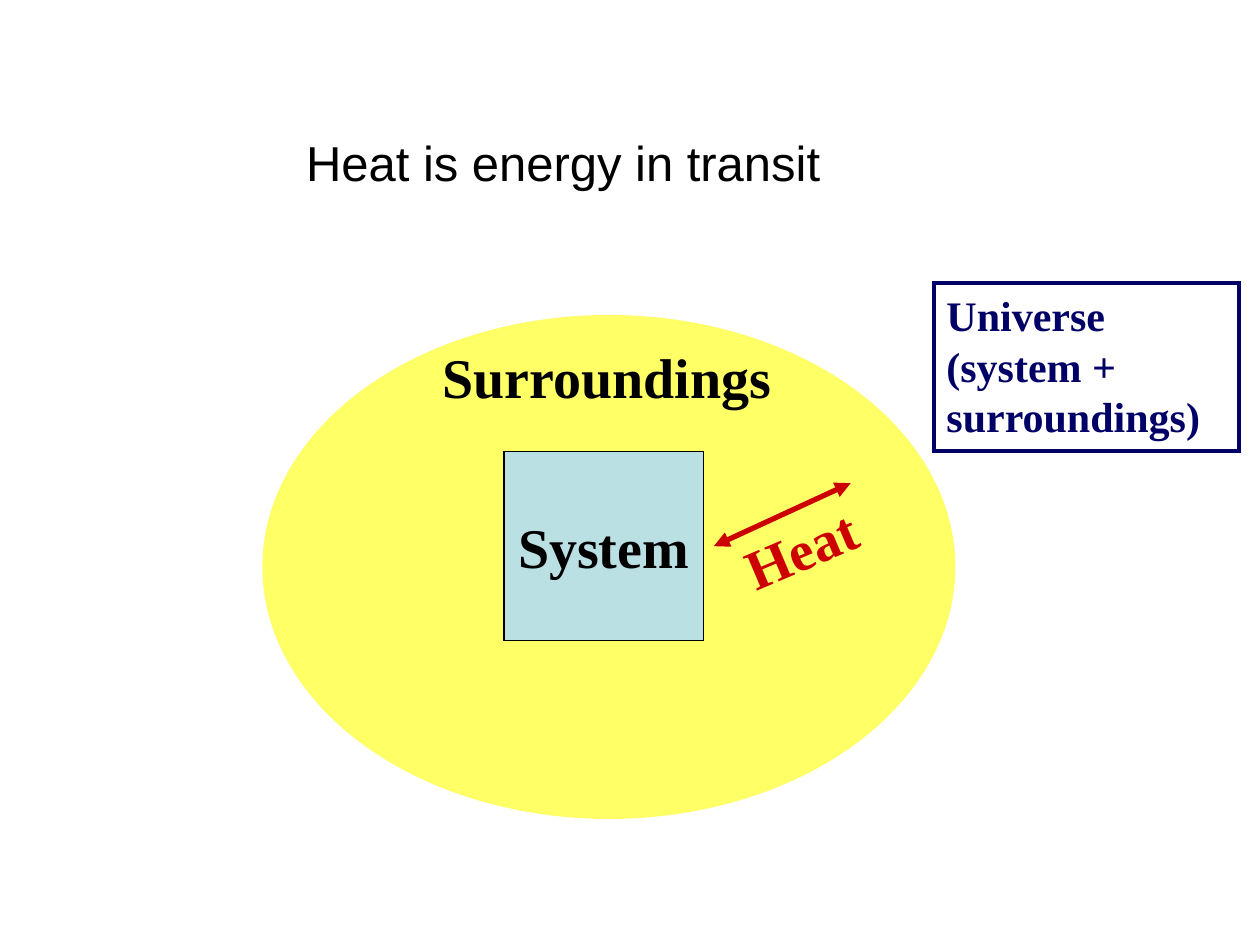
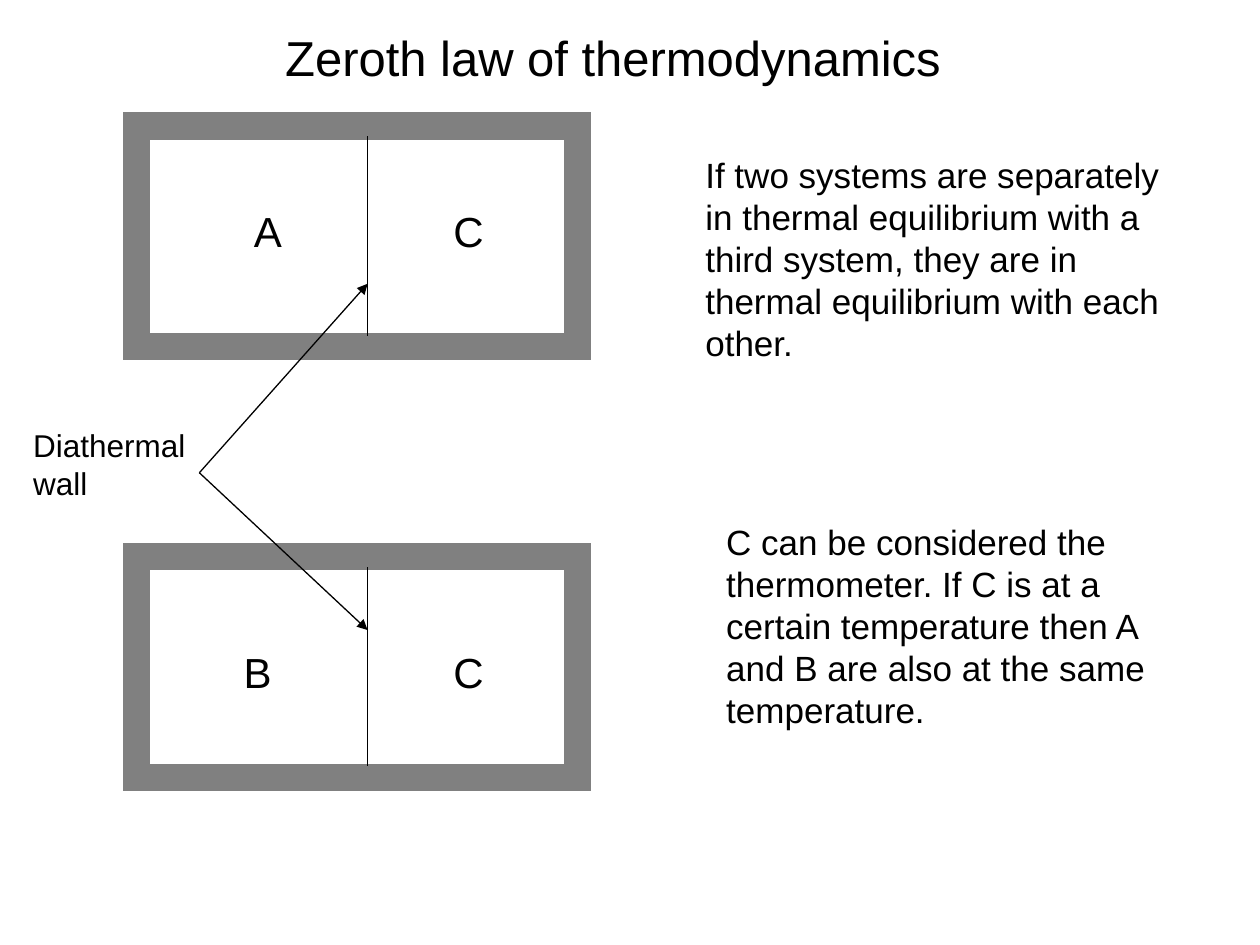
from lxml import etree
from pptx import Presentation
from pptx.dml.color import RGBColor
from pptx.enum.shapes import MSO_CONNECTOR, MSO_SHAPE as SHAPE
from pptx.enum.text import MSO_ANCHOR as ANCHOR, MSO_AUTO_SIZE as FIT, PP_ALIGN as ALIGN
from pptx.oxml.ns import qn
from pptx.util import Cm, Pt

COLORS = {
    "text": "000000",
    "universe": "000066",
    "surroundings": "FFFF66",
    "system": "BBE0E3",
    "heat": "CC0000",
    "insulation": "808080",
}
SANS, SERIF = "Arial", "Times New Roman"
TITLE_ONLY = 5


def rgb(name):
    return RGBColor.from_string(COLORS[name])


def write(tf, text, size=20, font=SANS, color="text", bold=False,
          align=ALIGN.LEFT, anchor=ANCHOR.TOP, wrap=True, fit=FIT.SHAPE_TO_FIT_TEXT):
    tf.word_wrap = wrap
    tf.auto_size = fit
    tf.vertical_anchor = anchor
    tf.margin_left = tf.margin_right = Cm(0.25)
    tf.margin_top = tf.margin_bottom = Cm(0.13)
    p = tf.paragraphs[0]
    p.alignment = align
    r = p.add_run()
    r.text = text
    r.font.size, r.font.name, r.font.bold = Pt(size), font, bold
    r.font.color.rgb = rgb(color)


class Deck:
    def __init__(self):
        self.prs = Presentation()
        self.prs.slide_width, self.prs.slide_height = Cm(25.4), Cm(19.05)
        self.s = None

    def slide(self, title, x, y, w, h=1.45):
        self.s = self.prs.slides.add_slide(self.prs.slide_layouts[TITLE_ONLY])
        sp = self.s.shapes.title
        sp.left, sp.top, sp.width, sp.height = Cm(x), Cm(y), Cm(w), Cm(h)
        write(sp.text_frame, title, size=28)

    def text(self, text, x, y, w, h, rotation=0, **fmt):
        sp = self.s.shapes.add_textbox(Cm(x), Cm(y), Cm(w), Cm(h))
        sp.rotation = rotation
        write(sp.text_frame, text, **fmt)

    def shape(self, kind, x, y, w, h, fill=None, line=None, weight=0.75):
        sp = self.s.shapes.add_shape(kind, Cm(x), Cm(y), Cm(w), Cm(h))
        sp.shadow.inherit = False
        if fill:
            sp.fill.solid()
            sp.fill.fore_color.rgb = rgb(fill)
        else:
            sp.fill.background()
        if line:
            sp.line.color.rgb = rgb(line)
            sp.line.width = Pt(weight)
            etree.SubElement(sp.line._get_or_add_ln(), qn("a:miter"), lim="800000")
        else:
            sp.line.fill.background()
        return sp

    def line(self, x1, y1, x2, y2, color="text", weight=0.75, arrows=()):
        """Draw a straight line; arrows names its pointed ends, headEnd before tailEnd."""
        cxn = self.s.shapes.add_connector(
            MSO_CONNECTOR.STRAIGHT, Cm(x1), Cm(y1), Cm(x2), Cm(y2))
        cxn.line.color.rgb = rgb(color)
        cxn.line.width = Pt(weight)
        for end in arrows:
            etree.SubElement(cxn.line._get_or_add_ln(), qn(f"a:{end}"), type="triangle")
        etree.SubElement(cxn._element.spPr, qn("a:effectLst"))

    def chamber(self, y, letter, letter_x, letter_dy):
        """Draw an insulated box split by a diathermal wall, with system C on the right."""
        self.shape(SHAPE.RECTANGLE, 2.75, y, 8.89, 4.45, line="insulation", weight=15.5)
        self.line(WALL_X, y + 0.21, WALL_X, y + 4.23)
        for name, x in ((letter, letter_x), ("C", 8.89)):
            self.text(name, x, y + letter_dy, 1.06, 1.27, size=24)


WALL_X = 7.41


def heat_slide(deck):
    label = dict(size=32, font=SERIF, bold=True, wrap=False)
    deck.slide("Heat is energy in transit", 5.92, 2.54, 12.9)
    universe = deck.shape(SHAPE.RECTANGLE, 18.83, 5.71, 6.14, 3.39,
                          line="universe", weight=2.25)
    write(universe.text_frame, "Universe (system + surroundings)",
          size=24, font=SERIF, bold=True, color="universe")
    deck.shape(SHAPE.OVAL, 5.29, 6.35, 13.97, 10.16, fill="surroundings")
    system = deck.shape(SHAPE.RECTANGLE, 10.16, 9.1, 4.02, 3.81, fill="system", line="text")
    write(system.text_frame, "System", align=ALIGN.CENTER, anchor=ANCHOR.MIDDLE,
          fit=FIT.NONE, **label)
    deck.text("Surroundings", 8.67, 6.78, 7.16, 1.6, **label)
    deck.line(14.39, 11.01, 17.15, 9.74, color="heat", weight=3,
              arrows=("headEnd", "tailEnd"))
    deck.text("Heat", 14.54, 10.24, 3.2, 1.6, rotation=337, color="heat",
              align=ALIGN.CENTER, **label)


def zeroth_law_slide(deck):
    deck.slide("Zeroth law of thermodynamics", 5.5, 0.42, 14.6)
    deck.chamber(2.54, "A", 4.87, 1.48)
    deck.chamber(11.22, "B", 4.66, 1.69)
    for y in (5.72, 12.7):
        deck.line(4.02, 9.53, WALL_X, y, arrows=("tailEnd",))
    deck.text("Diathermal wall", 0.42, 8.46, 3.6, 1.78, size=18)
    deck.text("If two systems are separately in thermal equilibrium with a third system, "
              "they are in thermal equilibrium with each other.", 13.97, 2.96, 9.95, 4.5)
    deck.text("C can be considered the thermometer. If C is at a certain temperature "
              "then A and B are also at the same temperature.", 14.39, 10.37, 9.31, 4.5)


def main():
    deck = Deck()
    heat_slide(deck)
    zeroth_law_slide(deck)
    deck.prs.save("out.pptx")


if __name__ == "__main__":
    main()
